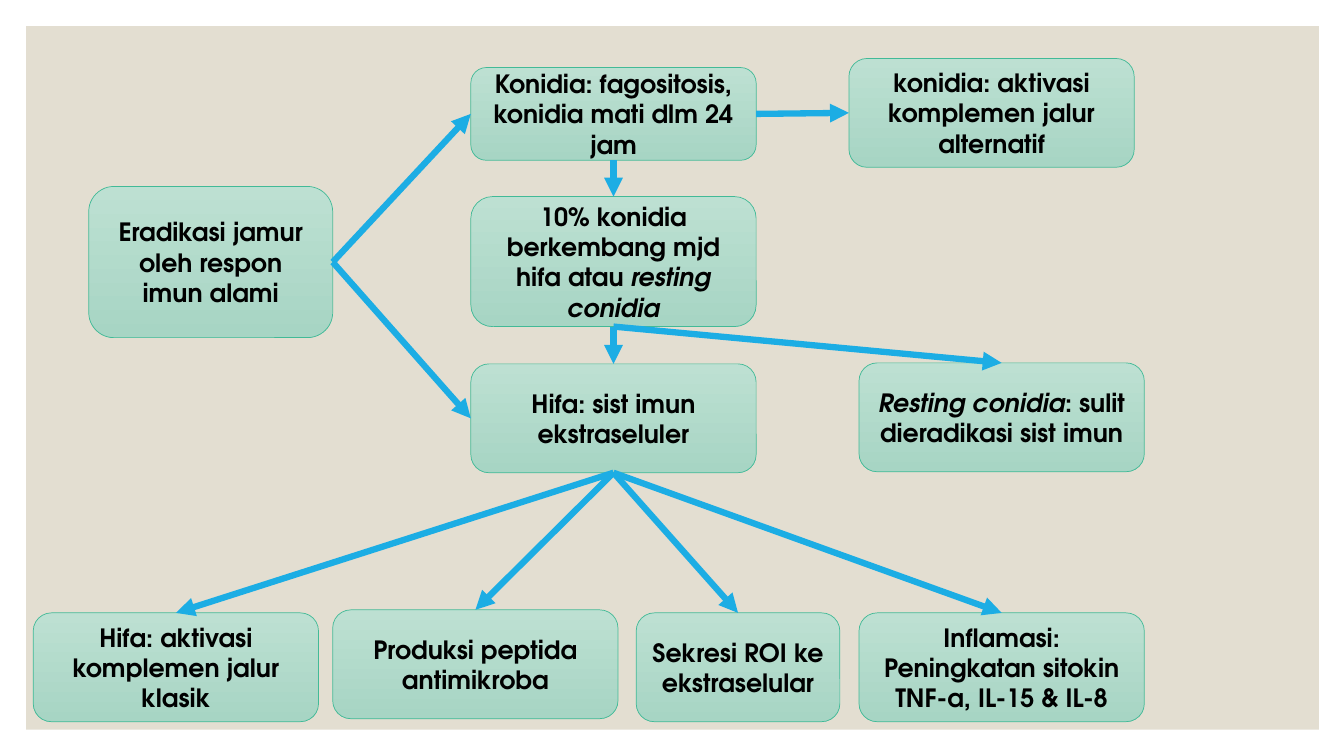
from dataclasses import dataclass

from lxml.etree import SubElement
from pptx import Presentation
from pptx.dml.color import RGBColor
from pptx.enum.shapes import MSO_CONNECTOR as Connector, MSO_SHAPE as Preset
from pptx.enum.text import MSO_ANCHOR as Anchor, PP_ALIGN as Align
from pptx.oxml.ns import qn
from pptx.shapes.autoshape import Shape
from pptx.slide import Slide
from pptx.text.text import TextFrame
from pptx.util import Inches, Pt

FONT = "TeX Gyre Adventor"
COLORS = {
    "panel": "E3DED1",
    "step_top": "BDE0D2",
    "step_bottom": "A7D5C4",
    "step_border": "42BA97",
    "arrow": "1CADE4",
    "text": "000000",
}
TOP, LEFT, BOTTOM, RIGHT = range(4)
WIDE = 2.83
TALL = 1.08
MIDDLE_X = 4.67
RIGHT_X = 8.52
BOTTOM_Y = 6.08


@dataclass(frozen=True)
class Run:
    text: str
    italic: bool = False


@dataclass(frozen=True)
class Step:
    key: str
    left: float
    top: float
    runs: tuple[Run, ...]
    width: float = WIDE
    height: float = TALL


@dataclass(frozen=True)
class Arrow:
    source: str
    source_side: int
    target: str
    target_side: int = TOP


STEPS = (
    Step("eradication", 0.88, 1.85, (Run("Eradikasi jamur oleh respon imun alami"),), 2.42, 1.5),
    Step("phagocytosis", MIDDLE_X, 0.67,
         (Run("Konidia: fagositosis, konidia mati dlm 24 jam"),), height=0.92),
    Step("alternative", 8.42, 0.58, (Run("konidia: aktivasi komplemen jalur alternatif"),)),
    Step("growth", MIDDLE_X, 1.95,
         (Run("10% konidia berkembang mjd hifa atau "), Run("resting conidia", italic=True)),
         height=1.29),
    Step("hyphae", MIDDLE_X, 3.61, (Run("Hifa: sist imun ekstraseluler"),)),
    Step("resting", RIGHT_X, 3.6,
         (Run("Resting conidia", italic=True), Run(": sulit dieradikasi sist imun"))),
    Step("classical", 0.33, BOTTOM_Y, (Run("Hifa: aktivasi komplemen jalur klasik"),)),
    Step("peptide", 3.3, 6.05, (Run("Produksi peptida antimikroba"),)),
    Step("roi", 6.31, BOTTOM_Y, (Run("Sekresi ROI ke ekstraselular"),), width=2.02),
    Step("inflammation", RIGHT_X, BOTTOM_Y,
         (Run("Inflamasi: Peningkatan sitokin TNF-a, IL-15 & IL-8"),)),
)

ARROWS = (
    Arrow("eradication", RIGHT, "phagocytosis", LEFT),
    Arrow("eradication", RIGHT, "hyphae", LEFT),
    Arrow("phagocytosis", RIGHT, "alternative", LEFT),
    Arrow("phagocytosis", BOTTOM, "growth"),
    Arrow("growth", BOTTOM, "hyphae"),
    Arrow("growth", BOTTOM, "resting"),
    *(Arrow("hyphae", BOTTOM, effect)
      for effect in ("classical", "peptide", "roi", "inflammation")),
)


def color(name: str) -> RGBColor:
    return RGBColor.from_string(COLORS[name])


def write_text(frame: TextFrame, text: str, *, size: float = 18, bold: bool = True,
               italic: bool = False, ink: str = "text") -> None:
    """Append one formatted run to the frame's first paragraph."""
    paragraph = frame.paragraphs[0]
    paragraph.alignment = Align.CENTER
    run = paragraph.add_run()
    run.text = text
    font = run.font
    font.name, font.size = FONT, Pt(size)
    font.bold, font.italic = bold, italic
    font.color.rgb = color(ink)


def draw_panel(slide: Slide) -> None:
    panel = slide.shapes.add_shape(
        Preset.RECTANGLE, Inches(0.26), Inches(0.26), Inches(12.82), Inches(6.98))
    panel.shadow.inherit = False
    panel.fill.solid()
    panel.fill.fore_color.rgb = color("panel")
    panel.line.fill.background()


def draw_step(slide: Slide, step: Step) -> Shape:
    box = slide.shapes.add_shape(
        Preset.ROUNDED_RECTANGLE, Inches(step.left), Inches(step.top),
        Inches(step.width), Inches(step.height))
    box.shadow.inherit = False
    box.fill.gradient()
    box.fill.gradient_angle = 270
    for stop, name in zip(box.fill.gradient_stops, ("step_top", "step_bottom")):
        stop.color.rgb = color(name)
    box.line.color.rgb = color("step_border")
    box.line.width = Pt(0.5)
    frame = box.text_frame
    frame.word_wrap = True
    frame.vertical_anchor = Anchor.MIDDLE
    for run in step.runs:
        write_text(frame, run.text, italic=run.italic)
    return box


def draw_arrow(slide: Slide, arrow: Arrow, boxes: dict[str, Shape]) -> None:
    link = slide.shapes.add_connector(Connector.STRAIGHT, 0, 0, 0, 0)
    link.begin_connect(boxes[arrow.source], arrow.source_side)
    link.end_connect(boxes[arrow.target], arrow.target_side)
    link.line.color.rgb = color("arrow")
    link.line.width = Pt(4.5)
    SubElement(link.line._get_or_add_ln(), qn("a:tailEnd"), type="triangle")
    SubElement(link._element.spPr, qn("a:effectLst"))


def main() -> None:
    deck = Presentation()
    deck.slide_width, deck.slide_height = Inches(13.33), Inches(7.5)
    slide = deck.slides.add_slide(deck.slide_layouts[6])
    draw_panel(slide)
    boxes = {step.key: draw_step(slide, step) for step in STEPS}
    for arrow in ARROWS:
        draw_arrow(slide, arrow, boxes)
    deck.save("out.pptx")


if __name__ == "__main__":
    main()
